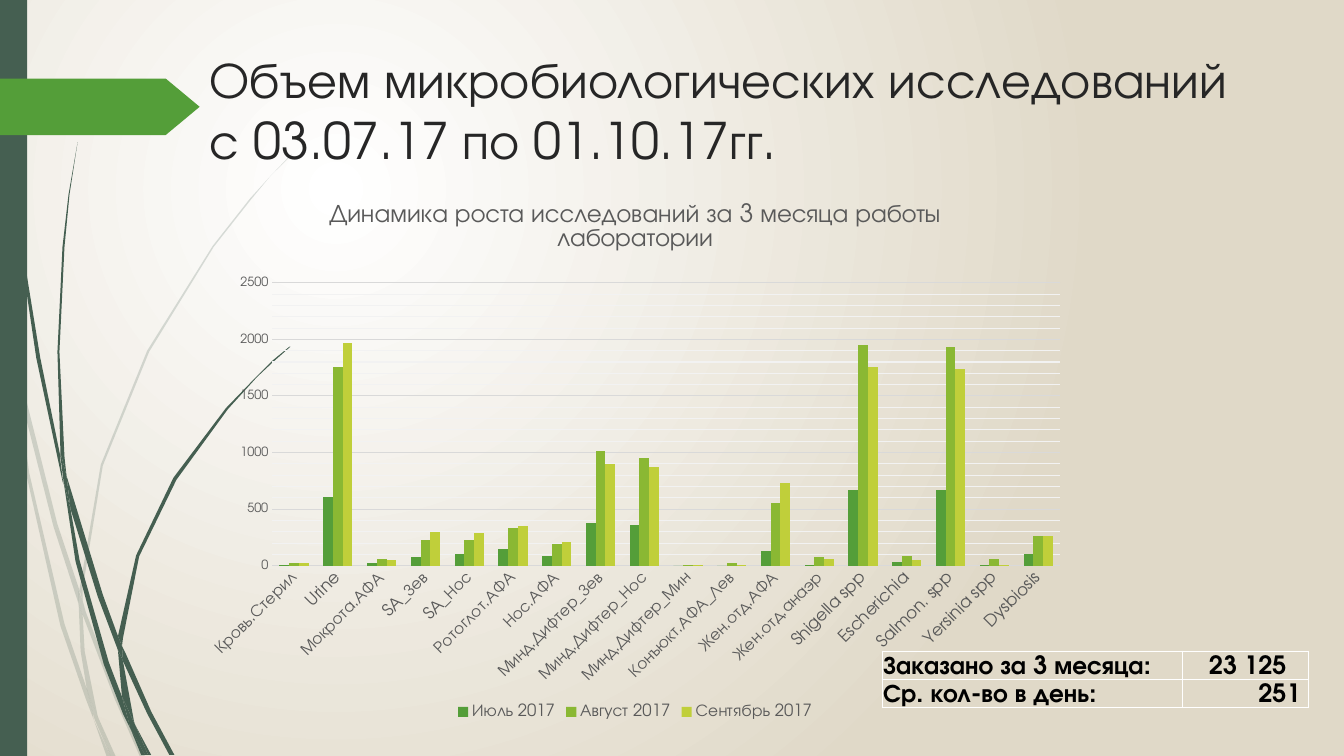
from dataclasses import dataclass

from lxml.etree import SubElement
from pptx import Presentation
from pptx.chart.data import CategoryChartData
from pptx.dml.color import RGBColor
from pptx.enum.chart import XL_CHART_TYPE, XL_LEGEND_POSITION, XL_TICK_MARK
from pptx.enum.shapes import MSO_SHAPE
from pptx.enum.text import MSO_ANCHOR, MSO_AUTO_SIZE, PP_ALIGN
from pptx.oxml import parse_xml
from pptx.oxml.ns import nsdecls, qn
from pptx.util import Inches, Pt


@dataclass(frozen=True)
class Theme:
    font: str = "TeX Gyre Adventor"
    dark: str = "455F51"
    accent: str = "549E39"
    series: tuple = ("549E39", "8AB833", "C0CF3A")
    background: tuple = ("FFFFFF", "E0D9C8")
    title: str = "262626"
    chart_text: str = "595959"
    major_grid: str = "D9D9D9"
    minor_grid: str = "F2F2F2"
    table_text: str = "000000"
    border: str = "FFFFFF"
    title_size: int = 36
    emphasis_size: int = 18
    label_size: int = 12
    value_size: int = 9


# Corner points of each piece of the grass blades, in inches
PALE_BLADES = [
    [(.1, 3.5), (.08, 3.22), (0, 2.82), (0, 2.99), (.09, 3.44)],
    [(.53, 5.22), (.78, 5.99), (.79, 5.86), (.57, 5.2), (.13, 3.45), (.16, 3.76)],
    [(.85, 6.07), (.82, 5.96), (.82, 6.1), (1.14, 6.94), (1.39, 7.51), (1.44, 7.51), (1.18, 6.92)],
    [(1.1, 7.51), (1.15, 7.51), (.97, 7.11)],
    [(.86, 6.83), (.64, 6.19), (.29, 4.69), (.16, 3.76), (.1, 3.5), (.26, 4.7), (.6, 6.21),
     (.85, 6.93), (.93, 7.14), (.92, 7.07)],
    [(.78, 5.99), (.8, 6.46), (.86, 6.83), (.89, 6.92), (.97, 7.11), (.96, 7.06), (.84, 6.46),
     (.82, 6.1), (.81, 6.08)],
    [(.82, 5.84), (1.02, 4.62), (1.48, 3.49), (2.12, 2.45), (2.49, 1.98), (2.68, 1.75), (2.89, 1.54),
     (2.89, 1.53), (2.68, 1.75), (2.48, 1.97), (2.11, 2.44), (1.46, 3.48), (1, 4.61), (.79, 5.84),
     (.79, 5.86), (.82, 5.96)],
    [(.93, 7.14), (1.06, 7.51), (1.1, 7.51)],
    [(.81, 6.08), (.82, 6.1), (.82, 5.96), (.78, 5.86), (.78, 5.99)],
    [(.89, 6.92), (.86, 6.83), (.92, 7.07), (.94, 7.14), (1.1, 7.51), (.97, 7.11)],
]
DARK_BLADES = [
    [(.07, 1.1), (.18, 2.33), (.36, 3.55), (.62, 4.77), (.63, 4.81), (.6, 4.57), (.6, 4.53),
     (.4, 3.55), (.2, 2.32), (.08, 1.09), (.05, .48), (.04, 0), (.03, 0), (.04, .48)],
    [(.97, 5.92), (1.17, 6.45), (1.17, 6.33), (1.17, 6.31), (1.02, 5.9), (.66, 4.72), (.7, 5.05)],
    [(1.25, 6.49), (1.21, 6.41), (1.22, 6.56), (1.46, 7.08), (1.68, 7.49), (1.73, 7.49), (1.5, 7.06)],
    [(1.21, 6.91), (1.08, 6.57), (.79, 5.56), (.7, 5.05), (.63, 4.77), (.75, 5.57), (1.03, 6.59),
     (1.22, 7.08), (1.29, 7.22), (1.28, 7.17)],
    [(.66, 4.72), (.64, 4.53), (.59, 3.49), (.64, 2.45), (.69, 1.93), (.77, 1.41), (.68, 1.93),
     (.62, 2.45), (.57, 3.49), (.6, 4.49)],
    [(1.47, 7.49), (1.5, 7.49), (1.34, 7.19)],
    [(.63, 4.77), (.7, 5.05), (.66, 4.72), (.6, 4.49), (.6, 4.53)],
    [(1.22, 6.33), (1.38, 5.52), (1.75, 4.76), (2.26, 4.06), (2.55, 3.74), (2.71, 3.59), (2.88, 3.44),
     (2.87, 3.44), (2.7, 3.58), (2.55, 3.73), (2.24, 4.05), (1.72, 4.74), (1.35, 5.51), (1.17, 6.31),
     (1.21, 6.41)],
    [(1.29, 7.22), (1.4, 7.49), (1.44, 7.49)],
    [(1.17, 6.45), (1.21, 6.91), (1.28, 7.06), (1.34, 7.19), (1.33, 7.16), (1.22, 6.56), (1.2, 6.51)],
    [(1.17, 6.45), (1.2, 6.51), (1.22, 6.56), (1.21, 6.41), (1.17, 6.31), (1.17, 6.33)],
    [(1.28, 7.06), (1.21, 6.91), (1.28, 7.17), (1.29, 7.22), (1.44, 7.49), (1.47, 7.49), (1.34, 7.19)],
]
TESTS = ["Кровь.Стерил", "Urine", "Мокрота.АФА", "SA_Зев", "SA_Нос", "Ротоглот.АФА", "Нос.АФА",
         "Минд.Дифтер_Зев", "Минд.Дифтер_Нос", "Минд.Дифтер_Мин", "Конъюкт.АФА_Лев", "Жен.отд.АФА",
         "Жен.отд.анаэр", "Shigella spp", "Escherichia", "Salmon. spp", "Yersinia spp", "Dysbiosis"]
MONTHS = {
    "Июль 2017": [10, 610, 20, 80, 100, 150, 90, 380, 360, 0, 0, 130, 10, 670, 30, 670, 10, 100],
    "Август 2017": [20, 1760, 60, 230, 230, 330, 190, 1010, 950, 10, 20, 550, 80, 1950, 90, 1930, 60, 260],
    "Сентябрь 2017": [20, 1970, 50, 300, 290, 350, 210, 900, 870, 10, 10, 730, 60, 1760, 50, 1740, 10, 260],
}
# Label, value and the gap to the right of the value
TOTALS = [("Заказано за 3 месяца:", "23 125", .22), ("Ср. кол-во в день:", "251", .08)]


class SlideBuilder:
    def __init__(self, slide, theme):
        self.slide = slide
        self.theme = theme

    def set_font(self, font, size, color, bold=False):
        font.name, font.size, font.bold = self.theme.font, Pt(size), bold
        font.color.rgb = RGBColor.from_string(color)

    def paint(self, shape, color, opacity=100):
        shape.shadow.inherit = False
        shape.fill.solid()
        shape.fill.fore_color.rgb = RGBColor.from_string(color)
        shape.line.fill.background()
        if opacity < 100:
            for rgb in shape._element.spPr.iter(qn("a:srgbClr")):
                SubElement(rgb, qn("a:alpha"), val=str(opacity * 1000))

    def add_background(self):
        fill = self.slide.background.fill
        fill.gradient()
        for stop, position, color in zip(fill.gradient_stops, (0, 1), self.theme.background):
            stop.position = position
            stop.color.rgb = RGBColor.from_string(color)
        linear = next(self.slide._element.iter(qn("a:lin")))
        linear.getparent().replace(linear, parse_xml(
            f'<a:path {nsdecls("a")} path="circle">'
            '<a:fillToRect l="50000" t="50000" r="100000" b="100000"/></a:path>'))

    def add_blades(self, outlines, opacity=100):
        group = self.slide.shapes.add_group_shape()
        for outline in outlines:
            points = [(Inches(x), Inches(y)) for x, y in outline]
            builder = group.shapes.build_freeform(*points[0])
            builder.add_line_segments(points[1:], close=True)
            self.paint(builder.convert_to_shape(), self.theme.dark, opacity)

    def add_shape(self, kind, left, top, width, height, color):
        shape = self.slide.shapes.add_shape(
            kind, Inches(left), Inches(top), Inches(width), Inches(height))
        self.paint(shape, color)
        return shape

    def add_title(self, text):
        title = self.slide.shapes.title
        title.left, title.top = Inches(1.98), Inches(.38)
        title.width, title.height = Inches(10.43), Inches(1.4)
        frame = title.text_frame
        frame.text = text
        frame.word_wrap, frame.auto_size = True, MSO_AUTO_SIZE.NONE
        frame.vertical_anchor = MSO_ANCHOR.MIDDLE
        frame.paragraphs[0].alignment = PP_ALIGN.LEFT
        self.set_font(frame.paragraphs[0].font, self.theme.title_size, self.theme.title)
        self.slide.shapes._spTree.append(title._element)

    def add_table(self, rows):
        table = self.slide.shapes.add_table(
            len(rows), 2, Inches(8.75), Inches(6.46), Inches(4.23), Inches(.56)).table
        table.first_row = table.horz_banding = False
        table.columns[0].width, table.columns[1].width = Inches(2.98), Inches(1.25)
        for index, (label, value, gap) in enumerate(rows):
            table.rows[index].height = Inches(.28)
            self.fill_cell(table.cell(index, 0), label, PP_ALIGN.LEFT, .01)
            self.fill_cell(table.cell(index, 1), value, PP_ALIGN.RIGHT, gap)

    def fill_cell(self, cell, text, alignment, right_gap):
        cell.text = text
        cell.vertical_anchor = MSO_ANCHOR.BOTTOM
        cell.margin_left = cell.margin_top = Inches(.01)
        cell.margin_right, cell.margin_bottom = Inches(right_gap), 0
        paragraph = cell.text_frame.paragraphs[0]
        paragraph.alignment = alignment
        self.set_font(paragraph.font, self.theme.emphasis_size, self.theme.table_text, bold=True)
        properties = cell._tc.get_or_add_tcPr()
        for side in ("lnL", "lnR", "lnT", "lnB"):
            line = SubElement(properties, qn(f"a:{side}"), w=str(Pt(1)))
            SubElement(SubElement(line, qn("a:solidFill")), qn("a:srgbClr"), val=self.theme.border)
        cell.fill.background()

    def add_chart(self, title, categories, series):
        theme = self.theme
        data = CategoryChartData()
        data.categories = categories
        for name, values in series.items():
            data.add_series(name, values)
        chart = self.slide.shapes.add_chart(
            XL_CHART_TYPE.COLUMN_CLUSTERED, Inches(1.91), Inches(1.78), Inches(8.78), Inches(5.4), data).chart
        self.set_font(chart.font, theme.label_size, theme.chart_text)
        chart.chart_title.text_frame.text = title
        self.set_font(chart.chart_title.text_frame.paragraphs[0].font, theme.emphasis_size, theme.chart_text)
        chart.has_legend = True
        chart.legend.position = XL_LEGEND_POSITION.BOTTOM
        chart.legend.include_in_layout = False
        self.set_font(chart.legend.font, theme.label_size, theme.chart_text)
        plot = chart.plots[0]
        plot.gap_width, plot.overlap, plot.vary_by_categories = 150, 0, False
        for month, color in zip(plot.series, theme.series):
            month.invert_if_negative = False
            month.format.fill.solid()
            month.format.fill.fore_color.rgb = RGBColor.from_string(color)
        for axis, size in ((chart.category_axis, theme.label_size), (chart.value_axis, theme.value_size)):
            axis.major_tick_mark = axis.minor_tick_mark = XL_TICK_MARK.NONE
            axis.format.line.fill.background()
            self.set_font(axis.tick_labels.font, size, theme.chart_text)
        chart.category_axis._element.txPr.bodyPr.set("rot", "-2700000")
        values = chart.value_axis
        values.minimum_scale, values.maximum_scale = 0, 2500
        values.major_unit, values.minor_unit = 500, 100
        values.major_gridlines.format.line.width = Pt(.75)
        values.major_gridlines.format.line.color.rgb = RGBColor.from_string(theme.major_grid)
        values.has_minor_gridlines = True
        values._element.find(qn("c:minorGridlines")).append(parse_xml(
            f'<c:spPr {nsdecls("c", "a")}><a:ln w="{Pt(.75)}"><a:solidFill>'
            f'<a:srgbClr val="{theme.minor_grid}"/></a:solidFill></a:ln></c:spPr>'))
        self.place_plot(chart, x=.09, y=.19, w=.89, h=.52)

    def place_plot(self, chart, **fractions):
        area = chart._chartSpace.chart.plotArea
        for layout in area.findall(qn("c:layout")):
            area.remove(layout)
        sizes = "".join(f'<c:{name} val="{value}"/>' for name, value in fractions.items())
        area.insert(0, parse_xml(
            f'<c:layout {nsdecls("c")}><c:manualLayout><c:layoutTarget val="inner"/>'
            f'<c:xMode val="edge"/><c:yMode val="edge"/>{sizes}</c:manualLayout></c:layout>'))


def main():
    presentation = Presentation()
    presentation.slide_width, presentation.slide_height = Inches(13.33), Inches(7.5)
    theme = Theme()
    builder = SlideBuilder(presentation.slides.add_slide(presentation.slide_layouts[5]), theme)
    builder.add_background()
    builder.add_blades(PALE_BLADES, opacity=20)
    builder.add_blades(DARK_BLADES)
    builder.add_shape(MSO_SHAPE.RECTANGLE, 0, 0, .27, 7.5, theme.dark)
    arrow = builder.add_shape(MSO_SHAPE.PENTAGON, 0, .78, 1.98, .56, theme.accent)
    arrow.adjustments[0] = .6
    builder.add_title("Объем микробиологических исследований с 03.07.17 по 01.10.17гг.")
    builder.add_table(TOTALS)
    builder.add_chart("Динамика роста исследований за 3 месяца работы лаборатории", TESTS, MONTHS)
    presentation.save("out.pptx")


if __name__ == "__main__":
    main()
